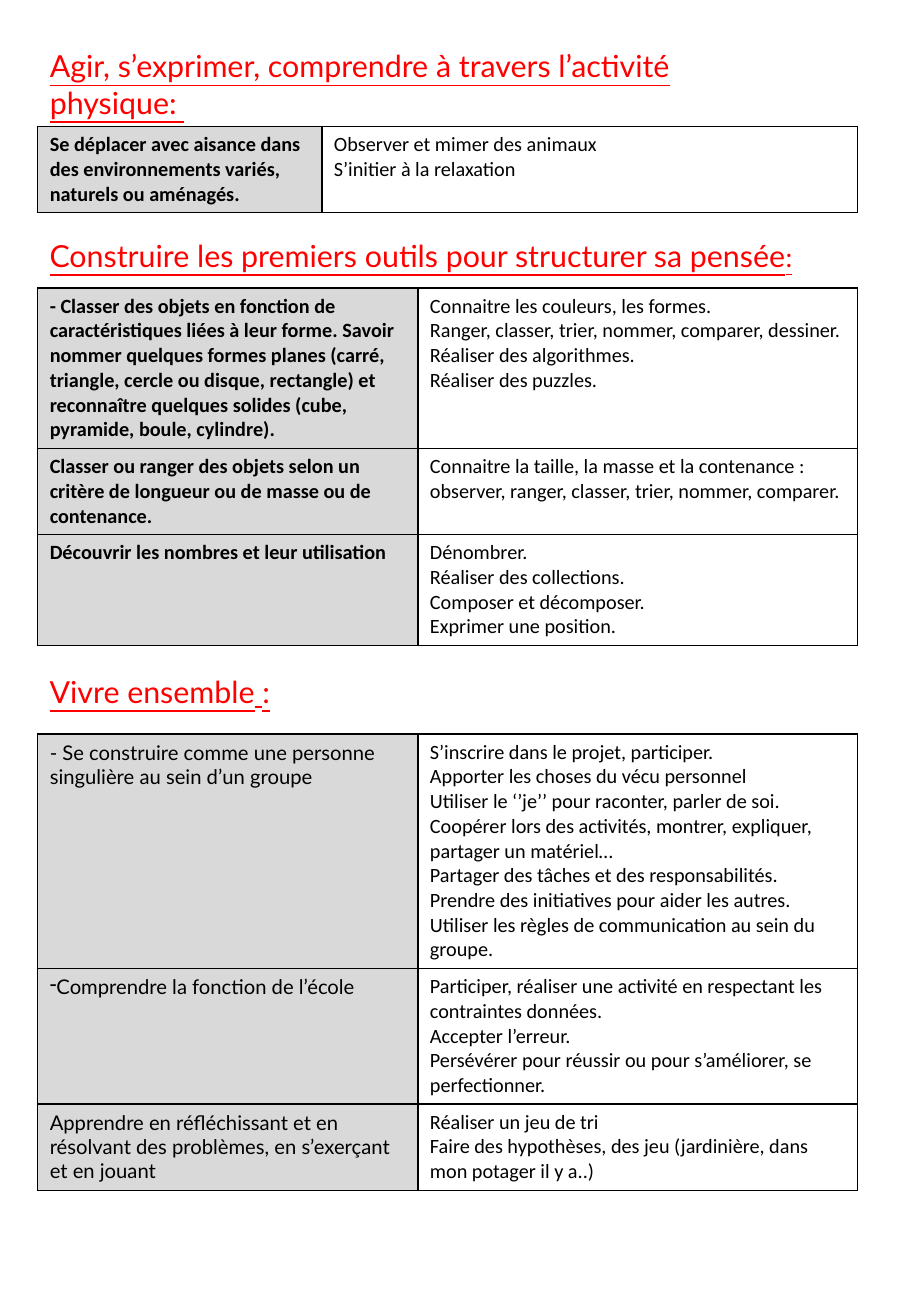
import pptx
import pptx.util
import pptx.dml.color
import pptx.enum.text
import pptx.oxml
import pptx.oxml.ns
from pptx.util import Inches

COLORS = {"heading": "FF0000", "text": "000000", "label": "D9D9D9", "content": "FFFFFF", "border": "000000"}
LEFT = 0.31
WIDE_COLUMNS = (3.13, 3.62)

MOVEMENT = [
    ("Se déplacer avec aisance dans des environnements variés, naturels ou aménagés.",
     ["Observer et mimer des animaux", "S’initier à la relaxation"]),
]
THINKING = [
    ("- Classer des objets en fonction de caractéristiques liées à leur forme. Savoir nommer quelques "
     "formes planes (carré, triangle, cercle ou disque, rectangle) et reconnaître quelques solides "
     "(cube, pyramide, boule, cylindre).",
     ["Connaitre les couleurs, les formes.", "Ranger, classer, trier, nommer, comparer, dessiner.",
      "Réaliser des algorithmes.", "Réaliser des puzzles."]),
    ("Classer ou ranger des objets selon un critère de longueur ou de masse ou de contenance.",
     ["Connaitre la taille, la masse et la contenance : observer, ranger, classer, trier, nommer, comparer."]),
    ("Découvrir les nombres et leur utilisation",
     ["Dénombrer.", "Réaliser des collections.", "Composer et décomposer.", "Exprimer une position."]),
]
TOGETHER = [
    ("- Se construire comme une personne singulière au sein d’un groupe",
     ["S’inscrire dans le projet, participer.", "Apporter les choses du vécu personnel",
      "Utiliser le ‘’je’’ pour raconter, parler de soi.",
      "Coopérer lors des activités, montrer, expliquer, partager un matériel…",
      "Partager des tâches et des responsabilités.", "Prendre des initiatives pour aider les autres.",
      "Utiliser les règles de communication au sein du groupe."]),
    ("Comprendre la fonction de l’école",
     ["Participer, réaliser une activité en respectant les contraintes données.", "Accepter l’erreur.",
      "Persévérer pour réussir ou pour s’améliorer, se perfectionner."]),
    ("Apprendre en réfléchissant et en résolvant des problèmes, en s’exerçant et en jouant",
     ["Réaliser un jeu de tri", "Faire des hypothèses, des jeu (jardinière, dans mon potager il y a..)"]),
]


class Page:
    def __init__(self, prs):
        self.s = prs.slides.add_slide(prs.slide_layouts[5])

    def color(self, name):
        return pptx.dml.color.RGBColor.from_string(COLORS[name])

    def style(self, font, name, size, color, bold=False, underline=False):
        font.name = name
        font.size = pptx.util.Pt(size)
        font.color.rgb = self.color(color)
        font.bold = bold
        font.underline = underline

    def write_heading(self, sp, runs, space_after=0):
        tf = sp.text_frame
        tf.word_wrap = True
        tf.auto_size = pptx.enum.text.MSO_AUTO_SIZE.NONE
        tf.vertical_anchor = pptx.enum.text.MSO_ANCHOR.TOP
        p = tf.paragraphs[0]
        p.alignment = pptx.enum.text.PP_ALIGN.LEFT
        p.space_after = pptx.util.Pt(space_after)
        for text, font, size in runs:
            r = p.add_run()
            r.text = text
            self.style(r.font, font, size, "heading", underline=True)

    def title(self, top, width, height, runs):
        sp = self.s.shapes.title
        sp.left, sp.top, sp.width, sp.height = map(Inches, (LEFT, top, width, height))
        self.write_heading(sp, runs)

    def heading(self, top, width, runs, space_after=0):
        sp = self.s.shapes.add_textbox(Inches(LEFT), Inches(top), Inches(width), Inches(0.4))
        self.write_heading(sp, runs, space_after)

    def dash(self, p):
        pPr = p._p.get_or_add_pPr()
        pPr.set("marL", "0")
        pPr.set("indent", "0")
        bullet = pptx.oxml.parse_xml(f'<a:buChar {pptx.oxml.ns.nsdecls("a")} char="-"/>')
        pPr.append(bullet)

    def borders(self, cell):
        tcPr = cell._tc.get_or_add_tcPr()
        for i, side in enumerate("LRTB"):
            line = pptx.oxml.parse_xml(
                f'<a:ln{side} {pptx.oxml.ns.nsdecls("a")} w="12700"><a:solidFill>'
                f'<a:srgbClr val="{COLORS["border"]}"/></a:solidFill></a:ln{side}>')
            tcPr.insert(i, line)

    def fill_cell(self, cell, lines, fill, font, bold=False, dashed=False):
        cell.fill.solid()
        cell.fill.fore_color.rgb = self.color(fill)
        self.borders(cell)
        cell.text_frame.text = "\n".join(lines)
        for p in cell.text_frame.paragraphs:
            if dashed:
                self.dash(p)
            for r in p.runs:
                self.style(r.font, font, 12, "text", bold)

    def table(self, top, columns, heights, rows, label_font="Calibri", bold=True, dashed_row=None):
        frame = self.s.shapes.add_table(len(rows), 2, Inches(LEFT), Inches(top),
                                        Inches(sum(columns)), Inches(sum(heights)))
        table = frame.table
        table.first_row = False
        table.horz_banding = False
        for column, width in zip(table.columns, columns):
            column.width = Inches(width)
        for i, (label, lines) in enumerate(rows):
            table.rows[i].height = Inches(heights[i])
            self.fill_cell(table.cell(i, 0), [label], "label", label_font, bold, i == dashed_row)
            self.fill_cell(table.cell(i, 1), lines, "content", "Calibri")


def main():
    prs = pptx.Presentation()
    prs.slide_width, prs.slide_height = Inches(7.5), Inches(10.83)
    page = Page(prs)
    page.title(0.34, 6.02, 0.7, [("Agir, s’exprimer, comprendre à travers l’activité physique: ", "Lato", 18)])
    page.table(1.04, (2.34, 4.41), [0.7], MOVEMENT)
    page.heading(1.9, 6.64, [("Construire les premiers outils pour structurer sa pensée", "Lato", 18),
                             (":", "Lato", 16)], space_after=10)
    page.table(2.37, WIDE_COLUMNS, [1.32, 0.7, 0.91], THINKING)
    page.heading(5.49, 3.75, [("Vivre ensemble", "Lato", 18), (" ", "Times New Roman", 18), (":", "Lato", 18)])
    page.table(6.04, WIDE_COLUMNS, [1.89, 1.1, 0.7], TOGETHER, label_font="Lato", bold=False, dashed_row=1)
    prs.save("out.pptx")


if __name__ == "__main__":
    main()
